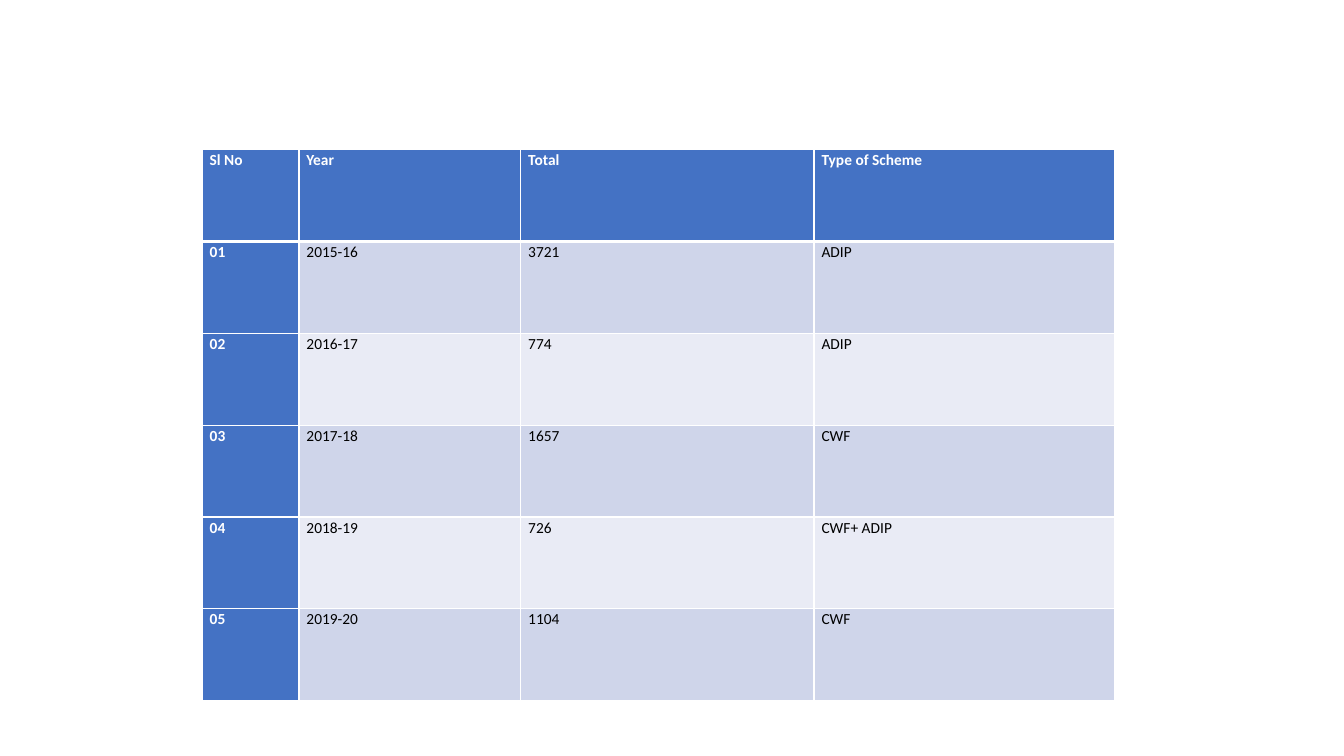
from dataclasses import dataclass

from lxml.etree import SubElement
from pptx import Presentation
from pptx.dml.color import RGBColor
from pptx.oxml.ns import qn
from pptx.util import Pt


@dataclass(frozen=True)
class Theme:
    font: str = "Calibri"
    text_size: float = 11
    heading_fill: str = "4472C4"
    heading_text: str = "FFFFFF"
    body_text: str = "000000"
    bands: tuple = ("CFD5EA", "E9EBF5")
    border: str = "FFFFFF"
    thin: float = 1
    thick: float = 3


THEME = Theme()

SCHEMES = [
    ("Sl No", "Year", "Total", "Type of Scheme"),
    ("01", "2015-16", "3721", "ADIP"),
    ("02", "2016-17", "774", "ADIP"),
    ("03", "2017-18", "1657", "CWF"),
    ("04", "2018-19", "726", "CWF+ ADIP"),
    ("05", "2019-20", "1104", "CWF"),
]
COLUMN_SHARES = (0.96, 2.2, 2.91, 2.98)


def set_borders(cell, row):
    """Draw thin borders, with a thick rule between the header and row 1."""
    properties = cell._tc.get_or_add_tcPr()
    top = THEME.thick if row == 1 else THEME.thin
    bottom = THEME.thick if row == 0 else THEME.thin
    widths = {"a:lnL": THEME.thin, "a:lnR": THEME.thin, "a:lnT": top, "a:lnB": bottom}
    for side, width in widths.items():
        line = SubElement(properties, qn(side), w=str(Pt(width)))
        fill = SubElement(line, qn("a:solidFill"))
        SubElement(fill, qn("a:srgbClr"), val=THEME.border)


def fill_cell(cell, wording, row, is_heading):
    set_borders(cell, row)
    band = THEME.bands[(row - 1) % len(THEME.bands)]
    cell.fill.solid()
    cell.fill.fore_color.rgb = RGBColor.from_string(
        THEME.heading_fill if is_heading else band)
    cell.margin_left = cell.margin_right = Pt(5.4)
    cell.margin_top = cell.margin_bottom = Pt(0)

    paragraph = cell.text_frame.paragraphs[0]
    paragraph.line_spacing = 1.07
    paragraph.space_after = Pt(8)
    run = paragraph.add_run()
    run.text = wording
    run.font.name = THEME.font
    run.font.size = Pt(THEME.text_size)
    run.font.bold = is_heading
    run.font.color.rgb = RGBColor.from_string(
        THEME.heading_text if is_heading else THEME.body_text)


def add_scheme_table(slide, left, top, width, height):
    frame = slide.shapes.add_table(
        len(SCHEMES), len(COLUMN_SHARES), Pt(left), Pt(top), Pt(width), Pt(height))
    table = frame.table
    table.first_col = True
    for column, share in zip(table.columns, COLUMN_SHARES):
        column.width = Pt(width * share / sum(COLUMN_SHARES))
    for row, entries in enumerate(SCHEMES):
        for col, wording in enumerate(entries):
            fill_cell(table.cell(row, col), wording, row, row == 0 or col == 0)


def main():
    presentation = Presentation()
    presentation.slide_width = Pt(960)
    presentation.slide_height = Pt(540)
    blank_layout = presentation.slide_layouts[6]
    slide = presentation.slides.add_slide(blank_layout)
    add_scheme_table(slide, left=144.4, top=106.8, width=651.6, height=393.8)
    presentation.save("out.pptx")


if __name__ == "__main__":
    main()
